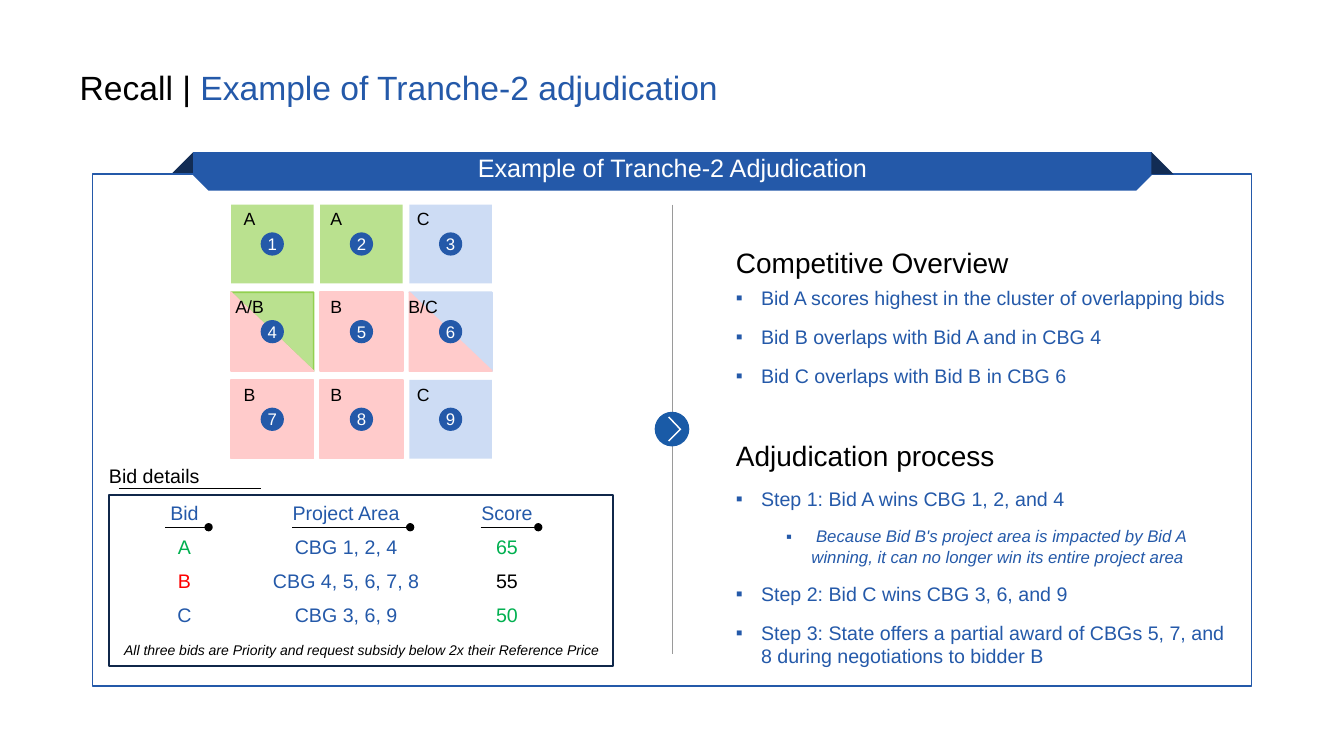
from lxml import etree
from pptx import Presentation
from pptx.dml.color import RGBColor
from pptx.enum.shapes import MSO_CONNECTOR, MSO_SHAPE
from pptx.enum.text import MSO_ANCHOR, MSO_AUTO_SIZE, PP_ALIGN
from pptx.oxml.ns import qn
from pptx.util import Pt

STRAIGHT = MSO_CONNECTOR.STRAIGHT
RECTANGLE, OVAL = MSO_SHAPE.RECTANGLE, MSO_SHAPE.OVAL
RIBBON, FOLD = MSO_SHAPE.SNIP_2_SAME_RECTANGLE, MSO_SHAPE.RIGHT_TRIANGLE
MIDDLE, TOP = MSO_ANCHOR.MIDDLE, MSO_ANCHOR.TOP
LEFT, CENTER = PP_ALIGN.LEFT, PP_ALIGN.CENTER
NO_AUTOFIT = MSO_AUTO_SIZE.NONE

FONT = "Arial"
BLACK = RGBColor(0x00, 0x00, 0x00)
WHITE = RGBColor(0xFF, 0xFF, 0xFF)
BLUE = RGBColor(0x24, 0x59, 0xA9)
ARROW_BLUE = RGBColor(0x1A, 0x5B, 0xA7)
FOLD_NAVY = RGBColor(0x12, 0x2C, 0x54)
BOX_NAVY = RGBColor(0x10, 0x27, 0x4A)
GRAY = RGBColor(0x9A, 0x9A, 0x9A)
GREEN = RGBColor(0x00, 0xB0, 0x50)
RED = RGBColor(0xFE, 0x00, 0x00)
TILE_GREEN = RGBColor(0xBA, 0xE1, 0x8F)
EDGE_GREEN = RGBColor(0x92, 0xD0, 0x50)
TILE_PINK = RGBColor(0xFF, 0xCB, 0xCB)
TILE_BLUE = RGBColor(0xCD, 0xDC, 0xF4)

# Label, then the tile's fill and outline; split tiles list the upper half first.
GREEN_AREA = (TILE_GREEN, None)
PINK_AREA = (TILE_PINK, TILE_PINK)
BLUE_AREA = (TILE_BLUE, None)
CBG_TILES = [
    ("A", GREEN_AREA), ("A", GREEN_AREA), ("C", BLUE_AREA),
    ("A/B", (TILE_GREEN, EDGE_GREEN), PINK_AREA), ("B", PINK_AREA),
    ("B/C", (TILE_BLUE, TILE_BLUE), PINK_AREA),
    ("B", PINK_AREA), ("B", PINK_AREA), ("C", BLUE_AREA),
]
BIDS = [
    [("Bid", BLUE), ("Project Area", BLUE), ("Score", BLUE)],
    [("A", GREEN), ("CBG 1, 2, 4", BLUE), ("65", GREEN)],
    [("B", RED), ("CBG 4, 5, 6, 7, 8", BLUE), ("55", BLACK)],
    [("C", BLUE), ("CBG 3, 6, 9", BLUE), ("50", GREEN)],
]
OVERVIEW = [
    (1, "Bid A scores highest in the cluster of overlapping bids"),
    (1, "Bid B overlaps with Bid A and in CBG 4"),
    (1, "Bid C overlaps with Bid B in CBG 6"),
]
PROCESS = [
    (1, "Step 1: Bid A wins CBG 1, 2, and 4"),
    (2, " Because Bid B's project area is impacted by Bid A winning, "
        "it can no longer win its entire project area"),
    (1, "Step 2: Bid C wins CBG 3, 6, and 9"),
    (1, "Step 3: State offers a partial award of CBGs 5, 7, and 8 "
        "during negotiations to bidder B"),
]


def write(paragraph, text, size=14, color=BLACK, italic=False, align=CENTER):
    paragraph.alignment = align
    run = paragraph.add_run()
    run.text = text
    run.font.name, run.font.size = FONT, Pt(size)
    run.font.bold, run.font.italic = False, italic
    run.font.color.rgb = color


def set_frame(frame, anchor=MIDDLE, wrap=True, inset=0):
    frame.auto_size = NO_AUTOFIT
    frame.word_wrap = wrap
    frame.vertical_anchor = anchor
    frame.margin_left = frame.margin_right = Pt(inset)
    frame.margin_top = frame.margin_bottom = Pt(inset)


def place(shape, left, top, width, height):
    shape.left, shape.top = Pt(left), Pt(top)
    shape.width, shape.height = Pt(width), Pt(height)


def paint(shape, fill=None, line=None, weight=1.0):
    shape.shadow.inherit = False
    if fill is None:
        shape.fill.background()
    else:
        shape.fill.solid()
        shape.fill.fore_color.rgb = fill
    if line is None:
        shape.line.fill.background()
    else:
        shape.line.color.rgb = line
        shape.line.width = Pt(weight)
    return shape


def add_preset(slide, preset, left, top, width, height, **look):
    shape = slide.shapes.add_shape(preset, Pt(left), Pt(top), Pt(width), Pt(height))
    return paint(shape, **look)


def add_polygon(slide, points, **look):
    start, *rest = [(Pt(x), Pt(y)) for x, y in points]
    builder = slide.shapes.build_freeform(*start)
    builder.add_line_segments(rest, close=True)
    return paint(builder.convert_to_shape(), **look)


def add_label(slide, text, left, top, width, height, **style):
    label = slide.shapes.add_textbox(Pt(left), Pt(top), Pt(width), Pt(height))
    set_frame(label.text_frame, wrap=False)
    write(label.text_frame.paragraphs[0], text, **style)


def add_rule(slide, x1, y1, x2, y2, color=BLACK, weight=0.5, dot=False):
    rule = slide.shapes.add_connector(STRAIGHT, Pt(x1), Pt(y1), Pt(x2), Pt(y2))
    rule.line.color.rgb = color
    rule.line.width = Pt(weight)
    if dot:
        etree.SubElement(rule.line._get_or_add_ln(), qn("a:tailEnd"), type="oval")
    etree.SubElement(rule._element.spPr, qn("a:effectLst"))


def set_bullet(paragraph, margin, hanging, bullet=None):
    props = paragraph._p.get_or_add_pPr()
    props.set("marL", str(Pt(margin)))
    props.set("indent", str(-Pt(hanging)))
    if bullet is None:
        etree.SubElement(props, qn("a:buNone"))
        return
    color = etree.SubElement(props, qn("a:buClr"))
    etree.SubElement(color, qn("a:srgbClr"), val=str(BLUE))
    etree.SubElement(props, qn("a:buFont"), typeface=FONT)
    etree.SubElement(props, qn("a:buChar"), char=bullet)


def fill_list(body, heading, items, top, height, heading_gap):
    place(body, 489.6, top, 394.6, height)
    frame = body.text_frame
    set_frame(frame, anchor=TOP)
    first = frame.paragraphs[0]
    first.level = 1
    first.space_before, first.space_after = Pt(0), Pt(heading_gap)
    set_bullet(first, 36, 0)
    write(first, heading, size=20, align=LEFT)
    for level, text in items:
        item = frame.add_paragraph()
        item.level = level
        item.space_before, item.space_after = Pt(5), Pt(6)
        set_bullet(item, 18 + 36 * level, 18, "▪")
        detail = level == 2
        write(item, text, size=12 if detail else 14, color=BLUE,
              italic=detail, align=LEFT)


def fill_title(title):
    place(title, 49.7, 49, 861, 30.2)
    set_frame(title.text_frame, inset=7.2)
    paragraph = title.text_frame.paragraphs[0]
    paragraph.line_spacing = 0.9
    write(paragraph, "Recall | ", size=24, align=LEFT)
    write(paragraph, "Example of Tranche-2 adjudication", size=24, color=BLUE, align=LEFT)


def add_banner_frame(slide):
    left_fold = add_preset(slide, FOLD, 122.2, 108.7, 15.8, 15.8, fill=FOLD_NAVY)
    left_fold._element.spPr.find(qn("a:xfrm")).set("flipH", "1")
    add_preset(slide, RECTANGLE, 66.2, 124.2, 828, 365.8, line=BLUE)
    banner = add_preset(slide, RIBBON, 138, 108.7, 684.7, 27.4, fill=BLUE)
    banner.adjustments[0], banner.adjustments[1] = 0, 0.4
    set_frame(banner.text_frame, inset=3.6)
    write(banner.text_frame.paragraphs[0], "Example of Tranche-2 Adjudication",
          size=18, color=WHITE)
    add_preset(slide, FOLD, 822.5, 108.7, 15.8, 15.8, fill=FOLD_NAVY)


def add_cbg_map(slide):
    width, height, disc = 59, 56.2, 16.6
    for index, (name, *areas) in enumerate(CBG_TILES):
        row, column = divmod(index, 3)
        left, top = 165 + 63.7 * column, 146.2 + 62.6 * row
        right, bottom = left + width, top + height
        if len(areas) == 1:
            fill, line = areas[0]
            add_preset(slide, RECTANGLE, left, top, width, height,
                       fill=fill, line=line, weight=1.2)
        else:
            for corner, (fill, line) in zip([(right, top), (left, bottom)], areas):
                add_polygon(slide, [(left, top), corner, (right, bottom)],
                            fill=fill, line=line, weight=1.2)
        number = add_preset(slide, OVAL, left + (width - disc) / 2,
                            top + (height - disc) / 2, disc, disc, fill=BLUE)
        set_frame(number.text_frame, wrap=False)
        write(number.text_frame.paragraphs[0], str(index + 1), size=12, color=WHITE)
        add_label(slide, name, 167.5 + 62 * column, top + 3.5, 21.6, 13, size=12.6)


def add_bid_details(slide):
    add_label(slide, "Bid details", 77.8, 331.4, 64.8, 17)
    add_rule(slide, 85, 348.5, 186.5, 348.5)
    add_preset(slide, RECTANGLE, 77.8, 353.5, 360, 122.4, line=BOX_NAVY)
    widths = [95.6, 135.4, 94.4]
    table = slide.shapes.add_table(len(BIDS), len(widths), Pt(84), Pt(354.6),
                                   Pt(sum(widths)), Pt(24.3 * len(BIDS))).table
    table.first_row = table.horz_banding = False
    for column, width in zip(table.columns, widths):
        column.width = Pt(width)
    for row, bid in zip(table.rows, BIDS):
        for cell, (text, color) in zip(row.cells, bid):
            cell.fill.background()
            cell.vertical_anchor = MIDDLE
            cell.margin_left = cell.margin_right = 0
            cell.margin_top = cell.margin_bottom = 0
            write(cell.text_frame.paragraphs[0], text, color=color)
    for start, end in [(118.1, 149), (208.8, 293), (343.4, 384.5)]:
        add_rule(slide, start, 376.6, end, 376.6, dot=True)
    add_label(slide, "All three bids are Priority and request subsidy below 2x their "
              "Reference Price", 87.1, 457.9, 342, 12.2, size=10, italic=True)


def add_divider(slide):
    add_rule(slide, 480.2, 146.2, 480.2, 467.3, color=GRAY, weight=0.75)
    add_preset(slide, OVAL, 468, 294.5, 24, 24, fill=ARROW_BLUE, line=ARROW_BLUE, weight=0.75)
    add_polygon(slide, [(478, 315.4), (477.3, 314.6), (485.3, 306.6), (477.3, 298.2),
                        (478, 297.4), (486.7, 306.6)], fill=WHITE)


def main():
    deck = Presentation()
    deck.slide_width, deck.slide_height = Pt(960), Pt(540)
    slide = deck.slides.add_slide(deck.slide_layouts[3])
    title, overview, process = slide.placeholders
    fill_title(title)
    fill_list(overview, "Competitive Overview", OVERVIEW, 175.5, 102.2, heading_gap=0)
    fill_list(process, "Adjudication process", PROCESS, 313, 165.6, heading_gap=6)
    add_banner_frame(slide)
    add_cbg_map(slide)
    add_bid_details(slide)
    add_divider(slide)
    deck.save("out.pptx")


if __name__ == "__main__":
    main()
